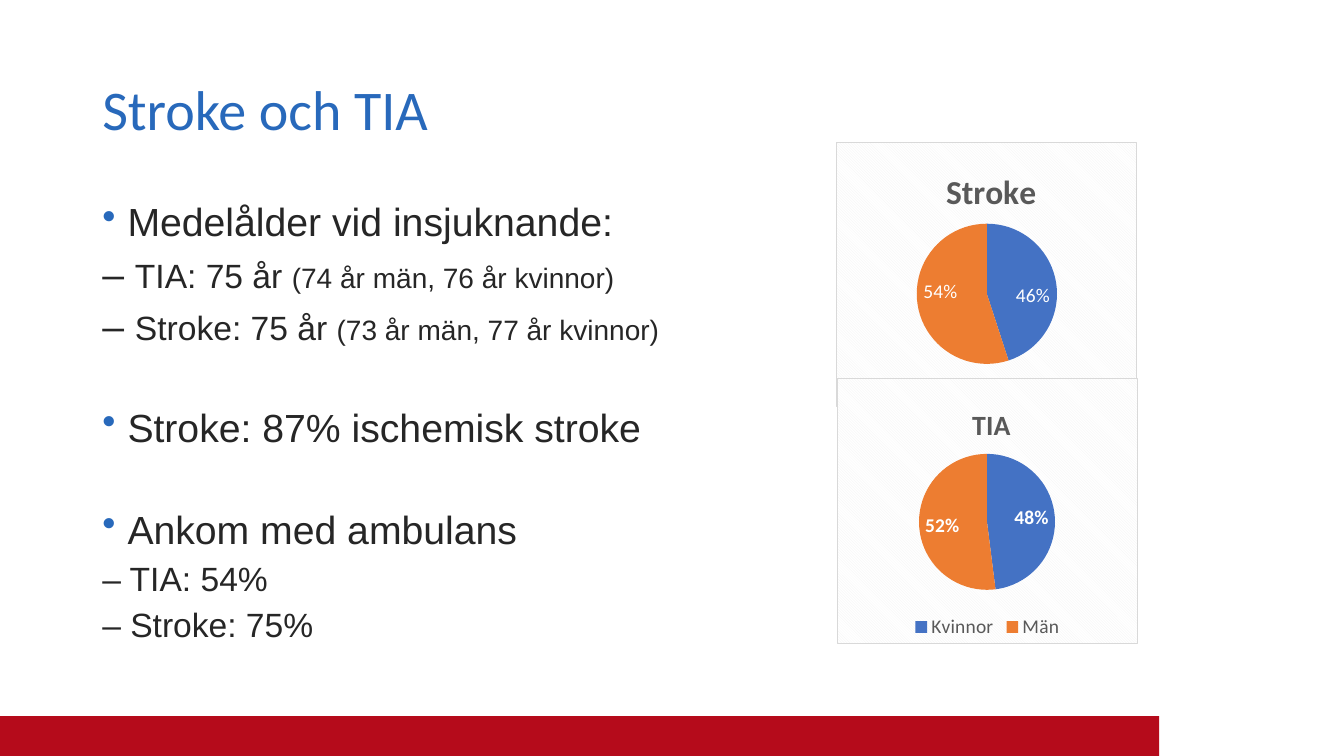
from dataclasses import dataclass

from lxml.etree import SubElement
from pptx import Presentation
from pptx.chart.chart import Chart
from pptx.chart.data import CategoryChartData
from pptx.dml.color import RGBColor
from pptx.enum.chart import XL_CHART_TYPE as ChartType
from pptx.enum.chart import XL_LABEL_POSITION as LabelPosition
from pptx.enum.chart import XL_LEGEND_POSITION as LegendPosition
from pptx.enum.shapes import MSO_SHAPE as Preset
from pptx.enum.text import MSO_ANCHOR as Anchor
from pptx.oxml import parse_xml
from pptx.oxml.ns import nsdecls, qn
from pptx.slide import Slide
from pptx.text.text import Font, TextFrame
from pptx.util import Emu, Pt

PX = 9525
BLUE, INK, GREY, WHITE, RED = "2869BB", "262626", "595959", "FFFFFF", "B50B1B"
SLICES = {"Kvinnor": "4472C4", "Män": "ED7D31"}
CHART_SIZE = (287, 253)


@dataclass(frozen=True)
class Line:
    """A body line made of (text, size) spans."""

    spans: tuple[tuple[str, int], ...]
    bullet: bool = False
    space_before: int = 10


@dataclass(frozen=True)
class Pie:
    """A pie panel; title and plot places are px inside the panel."""

    title: str
    title_size: int
    left: int
    top: int
    values: tuple[int, int]
    title_at: tuple[int, int]
    plot_at: tuple[int, int, int, int]
    labels: tuple[str, ...] = ()
    legend: bool = False


LINES = (
    Line((("Medelålder vid insjuknande:", 28),), True, 0),
    Line((("– ", 28), ("TIA: 75 år ", 24), ("(74 år män, 76 år kvinnor)", 20))),
    Line((("– ", 28), ("Stroke: 75 år ", 24), ("(73 år män, 77 år kvinnor)", 20))),
    Line((("Stroke: 87% ischemisk stroke", 28),), True, 46),
    Line((("Ankom med ambulans", 28),), True, 46),
    Line((("– TIA: 54%", 24),)),
    Line((("– Stroke: 75%", 24),)),
)
PIES = (
    Pie("Stroke", 24, 796, 135, (45, 55), (99, 20), (40, 78, 208, 134), ("46%", "54%")),
    Pie("TIA", 20, 797, 360, (48, 52), (124, 20), (78, 72, 130, 130), legend=True),
)


def px(*lengths: int) -> list[Emu]:
    """Turn px lengths into EMU."""
    return [Emu(length * PX) for length in lengths]


def color(code: str) -> RGBColor:
    """Turn a hex string into a colour."""
    return RGBColor.from_string(code)


def style(font: Font, name: str, size: int, code: str, bold: bool = False) -> None:
    """Set the face, size, colour and weight of a font."""
    font.name, font.size, font.bold = name, Pt(size), bold
    font.color.rgb = color(code)


def add_box(page: Slide, left: int, top: int, width: int, height: int) -> TextFrame:
    """Add a wrapping text box and return its frame."""
    frame = page.shapes.add_textbox(*px(left, top, width, height)).text_frame
    frame.word_wrap = True
    return frame


def add_title(page: Slide) -> None:
    """Add the slide heading."""
    frame = add_box(page, 88, 38, 1104, 139)
    frame.vertical_anchor = Anchor.MIDDLE
    frame.text = "Stroke och TIA"
    para = frame.paragraphs[0]
    para.line_spacing = 0.9
    style(para.runs[0].font, "Calibri", 40, BLUE)


def add_body(page: Slide) -> None:
    """Add the bulleted facts."""
    frame = add_box(page, 88, 192, 660, 457)
    for index, line in enumerate(LINES):
        para = frame.add_paragraph() if index else frame.paragraphs[0]
        para.line_spacing = 0.8
        para.space_before = Pt(line.space_before)
        if line.bullet:
            props = para._p.get_or_add_pPr()
            props.set("marL", str(24 * PX))
            props.set("indent", str(-24 * PX))
            SubElement(SubElement(props, qn("a:buClr")), qn("a:srgbClr"), val=BLUE)
            SubElement(props, qn("a:buChar"), char="•")
        for text, size in line.spans:
            span = para.add_run()
            span.text = text
            style(span.font, "Arial", size, INK)


def set_layout(parent, index: int, place: tuple[int, ...], inner: bool = False) -> None:
    """Give a chart part a fixed place, as shares of the panel."""
    for old in parent.findall(qn("c:layout")):
        parent.remove(old)
    shares = [round(length / CHART_SIZE[i % 2], 3) for i, length in enumerate(place)]
    target = '<c:layoutTarget val="inner"/>' if inner else ""
    modes = '<c:xMode val="edge"/><c:yMode val="edge"/>'
    values = "".join(f'<c:{key} val="{share}"/>' for key, share in zip("xywh", shares))
    parent.insert(index, parse_xml(
        f'<c:layout {nsdecls("c")}><c:manualLayout>{target}{modes}{values}'
        "</c:manualLayout></c:layout>"))


def fill_panel(chart: Chart) -> None:
    """Give the panel its diagonal pattern and thin border."""
    chart._chartSpace.find(qn("c:chart")).addnext(parse_xml(
        f'<c:spPr {nsdecls("c", "a")}><a:pattFill prst="dkDnDiag">'
        '<a:fgClr><a:srgbClr val="F2F2F2"/></a:fgClr>'
        '<a:bgClr><a:srgbClr val="FFFFFF"/></a:bgClr></a:pattFill>'
        '<a:ln w="9525"><a:solidFill><a:srgbClr val="D9D9D9"/></a:solidFill></a:ln>'
        "</c:spPr>"))


def add_pie(page: Slide, pie: Pie) -> None:
    """Add one pie panel."""
    data = CategoryChartData()
    data.categories = list(SLICES)
    data.add_series("Series 1", pie.values)
    chart = page.shapes.add_chart(
        ChartType.PIE, *px(pie.left, pie.top, *CHART_SIZE), data).chart
    style(chart.font, "Calibri", 10, "000000")
    fill_panel(chart)

    chart.has_title = True
    heading = chart.chart_title
    heading.text_frame.text = pie.title
    style(heading.text_frame.paragraphs[0].runs[0].font,
          "Calibri", pie.title_size, GREY, True)
    set_layout(heading._element, 1, pie.title_at)
    set_layout(chart._chartSpace.find(".//" + qn("c:plotArea")), 0, pie.plot_at, True)

    chart.has_legend = pie.legend
    if pie.legend:
        chart.legend.position = LegendPosition.BOTTOM
        chart.legend.include_in_layout = False
        style(chart.legend.font, "Calibri", 14, GREY)

    plot = chart.plots[0]
    plot.vary_by_categories = True
    series = plot.series[0]
    for index, code in enumerate(SLICES.values()):
        fill = series.points[index].format.fill
        fill.solid()
        fill.fore_color.rgb = color(code)
    labels = series.data_labels
    labels.show_percentage, labels.show_value = True, False
    labels.position = LabelPosition.INSIDE_END
    style(labels.font, "Calibri", 14, WHITE, True)
    for index, text in enumerate(pie.labels):
        label = series.points[index].data_label
        label.text_frame.text = text
        style(label.text_frame.paragraphs[0].runs[0].font, "Calibri", 14, WHITE)
        label.position = LabelPosition.INSIDE_END


def main() -> None:
    """Build the slide and save the deck."""
    deck = Presentation()
    deck.slide_width, deck.slide_height = px(1280, 720)
    page = deck.slides.add_slide(deck.slide_layouts[6])
    footer = page.shapes.add_shape(Preset.RECTANGLE, *px(0, 682, 1104, 38))
    footer.shadow.inherit = False
    footer.fill.solid()
    footer.fill.fore_color.rgb = color(RED)
    footer.line.fill.background()
    add_title(page)
    add_body(page)
    for pie in PIES:
        add_pie(page, pie)
    deck.save("out.pptx")


if __name__ == "__main__":
    main()
